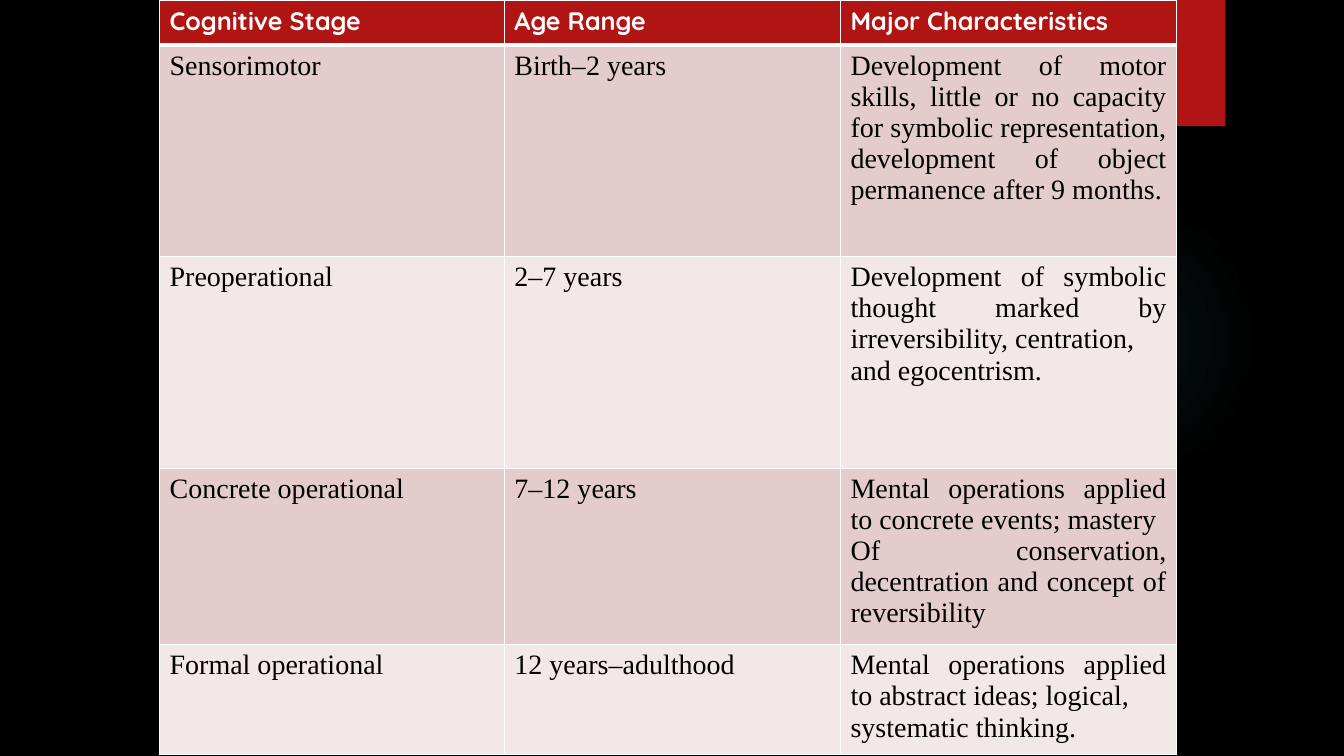
import pptx
import pptx.dml.color
import pptx.enum.shapes
import pptx.enum.text
import pptx.oxml
import pptx.oxml.ns
import pptx.util
from pptx.util import Cm

COLOURS = {
    "background": "000000",
    "glow": "50B9C1",
    "red": "B01513",
    "dark_row": "E4CCCC",
    "light_row": "F2E8E7",
    "white": "FFFFFF",
    "black": "000000",
}
NAMESPACE = pptx.oxml.ns.nsdecls("a")
COLUMN_WIDTHS = [8.69, 8.47, 8.47]
ROW_HEIGHTS = [1.14, 5.33, 5.33, 4.45, 2.77]
STAGES = [
    ["Cognitive Stage", "Age Range", "Major Characteristics"],
    ["Sensorimotor", "Birth–2 years",
     "Development of motor skills, little or no capacity for symbolic "
     "representation, development of object permanence after 9 months."],
    ["Preoperational", "2–7 years",
     "Development of symbolic thought marked by irreversibility, centration,\n"
     "and egocentrism."],
    ["Concrete operational", "7–12 years",
     "Mental operations applied to concrete events; mastery\n"
     "Of conservation, decentration and concept of reversibility"],
    ["Formal operational", "12 years–adulthood",
     "Mental operations applied to abstract ideas; logical,\n"
     "systematic thinking."],
]


def colour(name):
    return pptx.dml.color.RGBColor.from_string(COLOURS[name])


def add_border(cell, side, points):
    width = pptx.util.Pt(points)
    cell._tc.get_or_add_tcPr().append(pptx.oxml.parse_xml(
        f'<a:{side} {NAMESPACE} w="{width}"><a:solidFill>'
        f'<a:srgbClr val="{COLOURS["white"]}"/></a:solidFill></a:{side}>'))


presentation = pptx.Presentation()
presentation.slide_width = Cm(33.87)
presentation.slide_height = Cm(19.05)
slide = presentation.slides.add_slide(presentation.slide_layouts[6])
slide.background.fill.solid()
slide.background.fill.fore_color.rgb = colour("background")

# Faint round glow, fading outwards
glow = slide.shapes.add_shape(pptx.enum.shapes.MSO_SHAPE.OVAL,
                              Cm(23.9), Cm(4.65), Cm(7.82), Cm(7.82))
glow.shadow.inherit = False
glow.line.fill.background()
glow.fill.gradient()
stops = "".join(
    f'<a:gs pos="{position * 1000}"><a:srgbClr val="{COLOURS["glow"]}">'
    f'<a:alpha val="{alpha * 1000}"/></a:srgbClr></a:gs>'
    for position, alpha in [(0, 7), (36, 6), (69, 0), (100, 0)])
gradient = glow._element.spPr.find(pptx.oxml.ns.qn("a:gradFill"))
gradient.getparent().replace(gradient, pptx.oxml.parse_xml(
    f'<a:gradFill {NAMESPACE}><a:gsLst>{stops}</a:gsLst><a:path path="circle">'
    '<a:fillToRect l="50000" t="50000" r="50000" b="50000"/></a:path></a:gradFill>'))

# Red tab at the top right, with a soft shadow below
tab = slide.shapes.add_shape(pptx.enum.shapes.MSO_SHAPE.RECTANGLE,
                             Cm(28.98), 0, Cm(1.9), Cm(3.18))
tab.shadow.inherit = False
tab.fill.solid()
tab.fill.fore_color.rgb = colour("red")
tab.line.fill.background()
tab._element.spPr.find(pptx.oxml.ns.qn("a:effectLst")).append(pptx.oxml.parse_xml(
    f'<a:outerShdw {NAMESPACE} blurRad="{pptx.util.Pt(3)}" dist="{pptx.util.Pt(2)}" '
    f'dir="5400000" rotWithShape="0"><a:srgbClr val="{COLOURS["black"]}">'
    '<a:alpha val="45000"/></a:srgbClr></a:outerShdw>'))

# Table of cognitive stages
table = slide.shapes.add_table(len(STAGES), len(COLUMN_WIDTHS), Cm(4.02), 0,
                               Cm(sum(COLUMN_WIDTHS)), Cm(sum(ROW_HEIGHTS))).table
for column, width in zip(table.columns, COLUMN_WIDTHS):
    column.width = Cm(width)
for row, height in zip(table.rows, ROW_HEIGHTS):
    row.height = Cm(height)

for row_index, texts in enumerate(STAGES):
    is_header = row_index == 0
    row_fill = "red" if is_header else "dark_row" if row_index % 2 else "light_row"
    for column_index, text in enumerate(texts):
        cell = table.cell(row_index, column_index)
        for side in ("lnL", "lnR", "lnT", "lnB"):
            add_border(cell, side, 3 if is_header and side == "lnB" else 1)
        cell.fill.solid()
        cell.fill.fore_color.rgb = colour(row_fill)
        for line_index, line in enumerate(text.split("\n")):
            text_frame = cell.text_frame
            paragraph = text_frame.add_paragraph() if line_index else text_frame.paragraphs[0]
            if column_index == 2 and not is_header:
                paragraph.alignment = pptx.enum.text.PP_ALIGN.JUSTIFY
            run = paragraph.add_run()
            run.text = line
            run.font.name = "Quicksand" if is_header else "Times New Roman"
            run.font.size = pptx.util.Pt(18 if is_header else 20)
            run.font.bold = is_header
            run.font.color.rgb = colour("white" if is_header else "black")

presentation.save("out.pptx")
